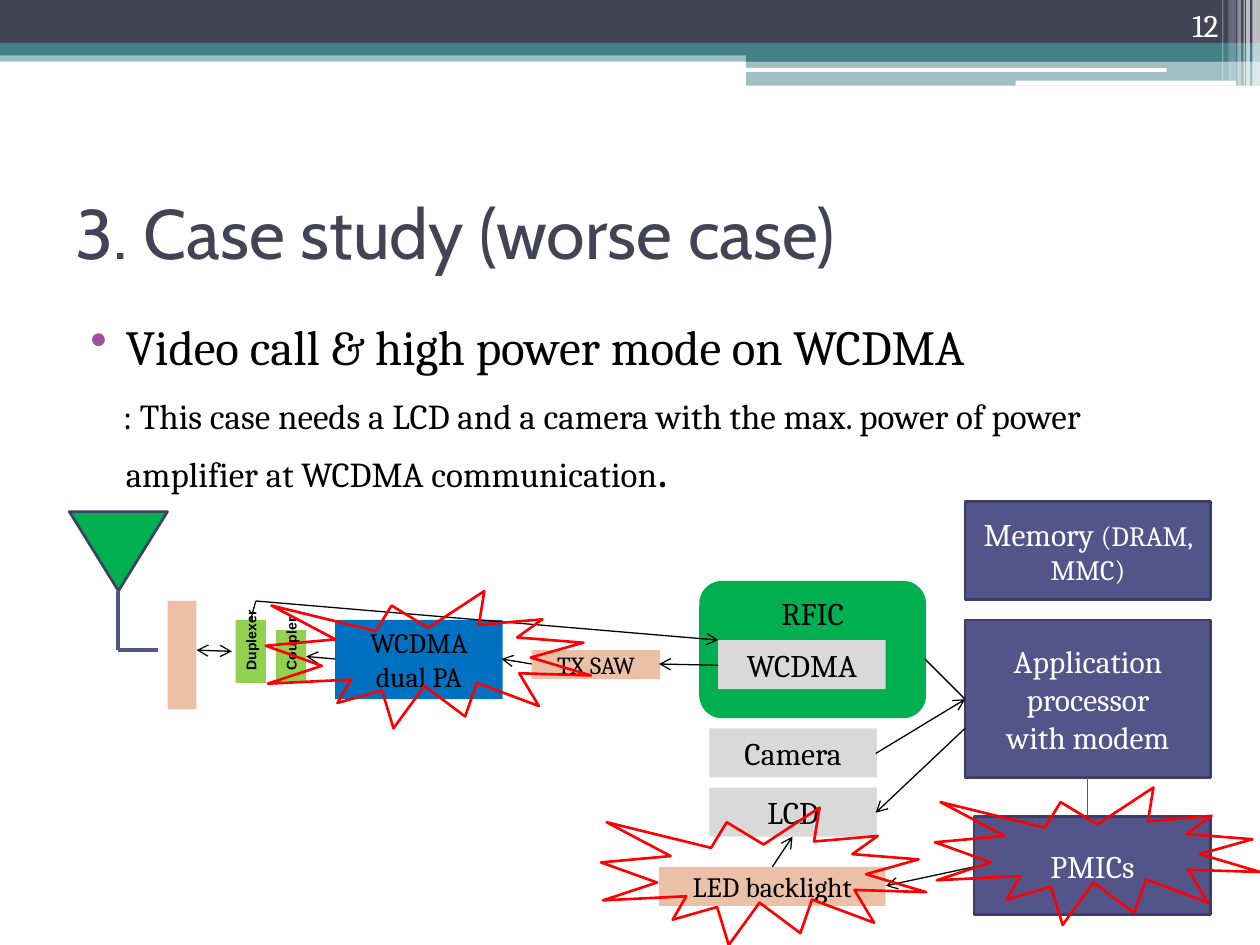
"""Build the worst-case power study slide for a WCDMA phone."""
import lxml.etree
import pptx
import pptx.dml.color
import pptx.enum.shapes
import pptx.enum.text
import pptx.oxml.ns
import pptx.util

Inches = pptx.util.Inches
Pt = pptx.util.Pt
RGBColor = pptx.dml.color.RGBColor
Shape = pptx.enum.shapes.MSO_SHAPE
Align = pptx.enum.text.PP_ALIGN
Anchor = pptx.enum.text.MSO_ANCHOR
qn = pptx.oxml.ns.qn

WHITE = RGBColor(0xFF, 0xFF, 0xFF)
BLACK = RGBColor(0x00, 0x00, 0x00)
NAVY = RGBColor(0x42, 0x44, 0x56)
TEAL = RGBColor(0x43, 0x80, 0x86)
INDIGO = RGBColor(0x53, 0x54, 0x8A)
DARK_INDIGO = RGBColor(0x3D, 0x3E, 0x66)
GREEN = RGBColor(0x00, 0xB0, 0x50)
LIME = RGBColor(0x92, 0xD0, 0x50)
BLUE = RGBColor(0x00, 0x70, 0xC0)
GRAY = RGBColor(0xD9, 0xD9, 0xD9)
PEACH = RGBColor(0xEB, 0xC0, 0xA7)
RED = RGBColor(0xFF, 0x00, 0x00)
PURPLE = RGBColor(0xA0, 0x4D, 0xA3)


class SlideBuilder:
    def __init__(self, slide, font="Cambria"):
        self.slide = slide
        self.font = font

    def shape(self, box, fill=None, kind=Shape.RECTANGLE, line=None, opacity=100):
        shape = self.slide.shapes.add_shape(kind, *map(Inches, box))
        shape.shadow.inherit = False
        if fill is None:
            shape.fill.background()
        else:
            shape.fill.solid()
            shape.fill.fore_color.rgb = fill
            if opacity < 100:
                color = shape._element.spPr.find(".//" + qn("a:srgbClr"))
                lxml.etree.SubElement(color, qn("a:alpha"), val=str(opacity * 1000))
        if line is None:
            shape.line.fill.background()
        else:
            shape.line.color.rgb = line
            shape.line.width = Pt(1.5)
        return shape

    def fill_text(self, shape, lines, size, color=BLACK, align=Align.CENTER,
                  anchor=Anchor.MIDDLE, font=None, bold=False):
        frame = shape.text_frame
        frame.word_wrap = True
        frame.vertical_anchor = anchor
        for index, runs in enumerate(lines):
            paragraph = frame.paragraphs[0] if index == 0 else frame.add_paragraph()
            paragraph.alignment = align
            paragraph.font.name = font or self.font
            paragraph.font.size = Pt(size)
            paragraph.font.color.rgb = color
            paragraph.font.bold = bold
            for text, run_size in [(runs, None)] if isinstance(runs, str) else runs:
                run = paragraph.add_run()
                run.text = text
                if run_size:
                    run.font.size = Pt(run_size)
        return frame

    def block(self, box, fill, lines, size=18, color=BLACK, line=None):
        return self.fill_text(self.shape(box, fill, line=line), lines, size, color)

    def vertical_block(self, box, text):
        shape = self.shape(box, LIME)
        shape.rotation = 180
        frame = self.fill_text(shape, [text], 8, font="Arial", bold=True)
        frame.word_wrap = False
        shape._element.txBody.find(qn("a:bodyPr")).set("vert", "eaVert")

    def text(self, box, lines, size, color=BLACK, **style):
        shape = self.slide.shapes.add_textbox(*map(Inches, box))
        return self.fill_text(shape, lines, size, color, **style)

    def indent(self, paragraph, left, first, bullet=None):
        properties = paragraph._p.get_or_add_pPr()
        properties.set("marL", str(Inches(left)))
        properties.set("indent", str(Inches(first)))
        if bullet:
            color = lxml.etree.Element(qn("a:buClr"))
            lxml.etree.SubElement(color, qn("a:srgbClr"), val=str(PURPLE))
            character = lxml.etree.Element(qn("a:buChar"), char=bullet)
            defaults = properties.find(qn("a:defRPr"))
            defaults.addprevious(color)
            defaults.addprevious(character)

    def line(self, start, end, color=BLACK, width=0.75, head=False, tail=False):
        connector = self.slide.shapes.add_connector(
            pptx.enum.shapes.MSO_CONNECTOR.STRAIGHT, *map(Inches, start + end))
        connector.line.color.rgb = color
        connector.line.width = Pt(width)
        properties = connector._element.spPr
        outline = properties.find(qn("a:ln"))
        for tag, shown in (("a:headEnd", head), ("a:tailEnd", tail)):
            if shown:
                lxml.etree.SubElement(outline, qn(tag), type="arrow")
        lxml.etree.SubElement(properties, qn("a:effectLst"))


def draw_banner(builder):
    for box, fill, opacity in (
        ((0, 0.4, 10, 0.09), TEAL, 50),
        ((0, 0, 10, 0.34), NAVY, 100),
        ((0, 0.34, 10, 0.1), TEAL, 100),
        ((5.92, 0.39, 4.08, 0.1), TEAL, 100),
        ((5.92, 0.48, 4.08, 0.2), TEAL, 50),
    ):
        builder.shape(box, fill, opacity=opacity)
    for box in ((5.91, 0.54, 3.35, 0.03), (8.06, 0.64, 1.75, 0.04)):
        builder.shape(box, WHITE, Shape.ROUNDED_RECTANGLE)
    for left, width, height, opacity in (
        (9.94, 0.06, 0.68, 65), (9.89, 0.03, 0.68, 65), (9.87, 0.01, 0.68, 60),
        (9.82, 0.03, 0.68, 40), (9.75, 0.06, 0.64, 20), (9.7, 0.01, 0.64, 30),
    ):
        builder.shape((left, 0, width, height), WHITE, opacity=opacity)
    builder.text((8.94, 0, 0.83, 0.4), ["12"], 18, WHITE,
                 align=Align.RIGHT, anchor=Anchor.BOTTOM)


def draw_text(builder):
    builder.text((0.5, 1.25, 9, 1.17), ["3. Case study (worse case)"], 40, NAVY,
                 align=Align.LEFT, font="Cabin")
    detail = (": This case needs a LCD and a camera with the max. power of power "
              "amplifier at WCDMA communication")
    body = builder.text(
        (0.5, 2.46, 9, 1.5),
        ["Video call & high power mode on WCDMA", [(detail, 20), (".", None)]],
        28, align=Align.LEFT, anchor=Anchor.TOP)
    heading, explanation = body.paragraphs
    heading.space_before = Pt(3)
    explanation.line_spacing = Pt(35)
    builder.indent(heading, 0.4, -0.28, "•")
    builder.indent(explanation, 0.4, -0.02)


def draw_blocks(builder):
    rfic = builder.shape((5.55, 4.61, 1.8, 1.09), GREEN, Shape.ROUNDED_RECTANGLE)
    builder.fill_text(rfic, ["RFIC"], 18, anchor=Anchor.TOP)
    for box, lines in (
        ((7.66, 4.92, 1.95, 1.25), ["Application processor", "with modem"]),
        ((7.66, 3.98, 1.95, 0.78), [[("Memory ", None), ("(DRAM, MMC)", 16)]]),
        ((7.73, 6.48, 1.88, 0.78), ["PMICs"]),
    ):
        builder.block(box, INDIGO, lines, color=WHITE, line=DARK_INDIGO)
    for left, top, name in ((5.7, 5.08, "WCDMA"), (5.63, 5.78, "Camera"), (5.63, 6.25, "LCD")):
        builder.block((left, top, 1.33, 0.39), GRAY, [name])
    builder.block((2.66, 4.92, 1.33, 0.63), BLUE, ["WCDMA dual PA"], 16)
    builder.block((4.22, 5.16, 1.02, 0.23), PEACH, ["TX SAW"], 14)
    builder.block((5.23, 6.88, 1.8, 0.31), PEACH, ["LED backlight"], 16)
    builder.shape((1.33, 4.77, 0.23, 0.86), PEACH)
    builder.vertical_block((2.19, 5, 0.24, 0.42), "Coupler")
    builder.vertical_block((1.87, 4.92, 0.24, 0.5), "Duplexer")
    antenna = builder.shape((0.55, 4.06, 0.78, 0.63), GREEN,
                            Shape.ISOSCELES_TRIANGLE, DARK_INDIGO)
    antenna.rotation = 180


def draw_links(builder):
    builder.line((0.94, 4.69), (0.94, 5.16), INDIGO, 2.25)
    builder.line((0.94, 5.16), (1.25, 5.16), INDIGO, 2.25)
    builder.line((8.63, 6.17), (8.63, 6.48), INDIGO)
    builder.line((7.34, 5.23), (7.66, 5.55))
    builder.line((2.03, 4.77), (1.99, 4.92))
    builder.line((1.84, 5.17), (1.56, 5.16), head=True, tail=True)
    for start, end in (
        ((7.66, 5.78), (6.95, 6.45)),
        ((5.7, 5.28), (5.23, 5.27)),
        ((4.22, 5.27), (3.98, 5.23)),
        ((2.66, 5.23), (2.43, 5.21)),
        ((2.03, 4.77), (5.7, 5.08)),
        ((7.73, 6.88), (7.03, 7.03)),
        ((6.13, 6.88), (6.29, 6.64)),
        ((6.95, 5.98), (7.66, 5.55)),
    ):
        builder.line(start, end, tail=True)
    for left, top in ((2.11, 4.69), (4.77, 6.41), (7.42, 6.25)):
        builder.shape((left, top, 2.58, 1.09), kind=Shape.EXPLOSION1, line=RED)


def main():
    presentation = pptx.Presentation()
    presentation.slide_width = Inches(10)
    presentation.slide_height = Inches(7.5)
    slide = presentation.slides.add_slide(presentation.slide_layouts[6])
    builder = SlideBuilder(slide)
    draw_banner(builder)
    draw_text(builder)
    draw_blocks(builder)
    draw_links(builder)
    presentation.save("out.pptx")


if __name__ == "__main__":
    main()
